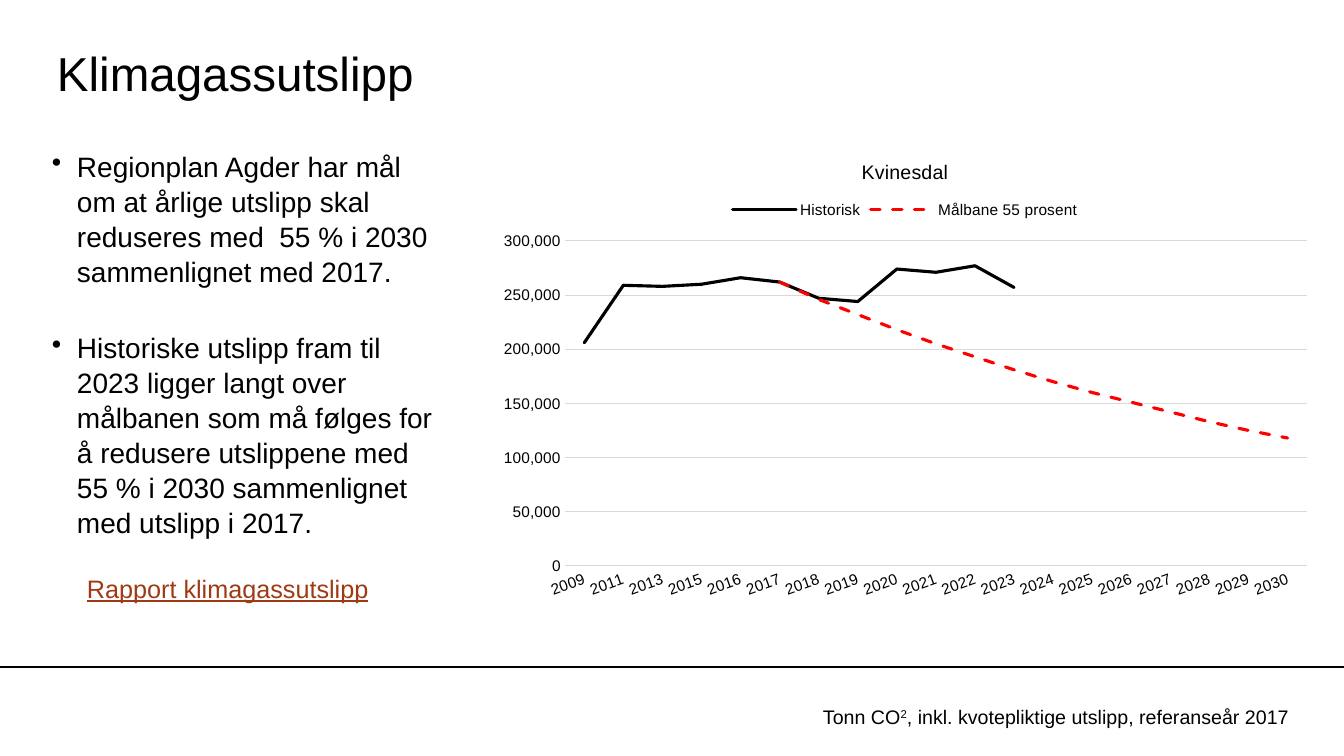
import lxml.etree
import pptx
import pptx.chart.data
import pptx.dml.color
import pptx.enum.chart
import pptx.enum.dml
import pptx.enum.shapes
import pptx.enum.text
import pptx.oxml
import pptx.oxml.ns
import pptx.util

SLIDE_WIDTH, SLIDE_HEIGHT = 1344, 756
EMU_PER_PX = 12192000 / SLIDE_WIDTH
FONT = "Arial"
BLACK, RED, GRID, LINK = "000000", "FF0000", "D9D9D9", "9F3A14"

YEARS = [2009, 2011, 2013] + list(range(2015, 2031))
HISTORIC = [206000, 259000, 258000, 260000, 266000, 262000, 247000, 244000,
            274000, 271000, 277000, 257000]
TARGET = [262000, 246000, 232000, 218000, 205000, 193000, 181000, 170000,
          160000, 151000, 142000, 133000, 125000, 118000]
BULLETS = [
    "Regionplan Agder har mål om at årlige utslipp skal reduseres med  55 % i 2030 "
    "sammenlignet med 2017.",
    "Historiske utslipp fram til 2023 ligger langt over målbanen som må følges for å "
    "redusere utslippene med 55 % i 2030 sammenlignet med utslipp i 2017.",
]


def px(length):
    return pptx.util.Emu(round(length * EMU_PER_PX))


def color(value):
    return pptx.dml.color.RGBColor.from_string(value)


def set_font(font, size, fill=BLACK):
    font.name = FONT
    font.size = pptx.util.Pt(size)
    font.bold = False
    font.color.rgb = color(fill)


def set_line(line, fill, width):
    line.color.rgb = color(fill)
    line.width = pptx.util.Pt(width)


def add_text(paragraph, text, size, fill=BLACK, underline=None, baseline=None):
    run = paragraph.add_run()
    run.text = text
    set_font(run.font, size, fill)
    run.font.underline = underline
    if baseline:
        run.font._element.set("baseline", str(baseline))


def add_box(slide, box, inset=(0, 0), anchor=pptx.enum.text.MSO_ANCHOR.TOP):
    frame = slide.shapes.add_textbox(*map(px, box)).text_frame
    frame.word_wrap = True
    frame.vertical_anchor = anchor
    frame.margin_left = frame.margin_right = px(inset[0])
    frame.margin_top = frame.margin_bottom = px(inset[1])
    return frame


def add_title(slide, box):
    frame = add_box(slide, box, anchor=pptx.enum.text.MSO_ANCHOR.MIDDLE)
    add_text(frame.paragraphs[0], "Klimagassutslipp", 34)


def add_bullets(slide, box):
    frame = add_box(slide, box)
    for index, text in enumerate(BULLETS):
        paragraph = frame.add_paragraph() if index else frame.paragraphs[0]
        paragraph.line_spacing = 1.04
        if index:
            paragraph.space_before = pptx.util.Pt(30)
        properties = paragraph._p.get_or_add_pPr()
        properties.set("marL", str(px(25)))
        properties.set("indent", str(-px(25)))
        bullet = lxml.etree.SubElement(properties, pptx.oxml.ns.qn("a:buChar"))
        bullet.set("char", "•")
        add_text(paragraph, text, 20)


def add_report(slide, box):
    frame = add_box(slide, box, inset=(10, 5))
    add_text(frame.paragraphs[0], "Rapport klimagassutslipp", 18, fill=LINK, underline=True)


def add_footer(slide, box):
    left, top, width, height = box
    rule = slide.shapes.add_connector(
        pptx.enum.shapes.MSO_CONNECTOR.STRAIGHT,
        px(left), px(top), px(left + width), px(top))
    set_line(rule.line, BLACK, 0.75)
    lxml.etree.SubElement(rule._element.spPr, pptx.oxml.ns.qn("a:effectLst"))
    frame = add_box(slide, (left + 813, top + 33, 513, 34), inset=(10, 5))
    paragraph = frame.paragraphs[0]
    add_text(paragraph, "Tonn CO", 14)
    add_text(paragraph, "2", 14, baseline=30000)
    add_text(paragraph, ", inkl. kvotepliktige utslipp, referanseår 2017", 14)


def set_plot_area(chart, fractions):
    modes = [("layoutTarget", "inner"), ("xMode", "edge"), ("yMode", "edge")]
    values = modes + list(zip("xywh", fractions))
    parts = "".join(f'<c:{name} val="{value}"/>' for name, value in values)
    layout = pptx.oxml.parse_xml(
        f'<c:layout {pptx.oxml.ns.nsdecls("c")}>'
        f"<c:manualLayout>{parts}</c:manualLayout></c:layout>")
    plot_area = chart._chartSpace.chart.plotArea
    for old in plot_area.findall(pptx.oxml.ns.qn("c:layout")):
        plot_area.remove(old)
    plot_area.insert(0, layout)


def add_emissions_chart(slide, box):
    data = pptx.chart.data.CategoryChartData(number_format="#,##0")
    data.categories = [str(year) for year in YEARS]
    data.add_series("Historisk", HISTORIC + [None] * (len(YEARS) - len(HISTORIC)))
    data.add_series("Målbane 55 prosent", [None] * (len(YEARS) - len(TARGET)) + TARGET)
    chart = slide.shapes.add_chart(
        pptx.enum.chart.XL_CHART_TYPE.LINE, *map(px, box), data).chart
    set_font(chart.font, 10)
    chart.has_title = True
    add_text(chart.chart_title.text_frame.paragraphs[0], "Kvinesdal", 14)
    chart.chart_title.include_in_layout = False
    chart.has_legend = True
    chart.legend.position = pptx.enum.chart.XL_LEGEND_POSITION.TOP
    chart.legend.include_in_layout = False
    set_font(chart.legend.font, 11)
    chart.plots[0].vary_by_categories = False

    for axis in (chart.category_axis, chart.value_axis):
        axis.major_tick_mark = axis.minor_tick_mark = pptx.enum.chart.XL_TICK_MARK.NONE
        set_font(axis.tick_labels.font, 11)
    set_line(chart.category_axis.format.line, GRID, 0.75)
    text_properties = chart.category_axis._element.find(pptx.oxml.ns.qn("c:txPr"))
    text_properties.find(pptx.oxml.ns.qn("a:bodyPr")).set("rot", "-1200000")
    chart.value_axis.format.line.fill.background()
    chart.value_axis.minimum_scale = 0
    chart.value_axis.maximum_scale = 300000
    chart.value_axis.major_unit = 50000
    chart.value_axis.tick_labels.number_format = "#,##0"
    chart.value_axis.tick_labels.number_format_is_linked = False
    chart.value_axis.has_major_gridlines = True
    set_line(chart.value_axis.major_gridlines.format.line, GRID, 0.75)

    for series, fill in zip(chart.plots[0].series, (BLACK, RED)):
        series.smooth = False
        series.marker.style = pptx.enum.chart.XL_MARKER_STYLE.NONE
        set_line(series.format.line, fill, 2.25)
        series.format.line._get_or_add_ln().set("cap", "rnd")
        if fill == RED:
            series.format.line.dash_style = pptx.enum.dml.MSO_LINE.DASH
    set_plot_area(chart, (0.094, 0.214, 0.886, 0.696))


def main():
    presentation = pptx.Presentation()
    presentation.slide_width = px(SLIDE_WIDTH)
    presentation.slide_height = px(SLIDE_HEIGHT)
    slide = presentation.slides.add_slide(presentation.slide_layouts[6])
    add_title(slide, (57, 34, 1119, 76))
    add_bullets(slide, (52, 148, 387, 380))
    add_footer(slide, (0, 667, SLIDE_WIDTH, 89))
    add_report(slide, (77, 568, 319, 40))
    add_emissions_chart(slide, (486, 141, 838, 467))
    presentation.save("out.pptx")


if __name__ == "__main__":
    main()
